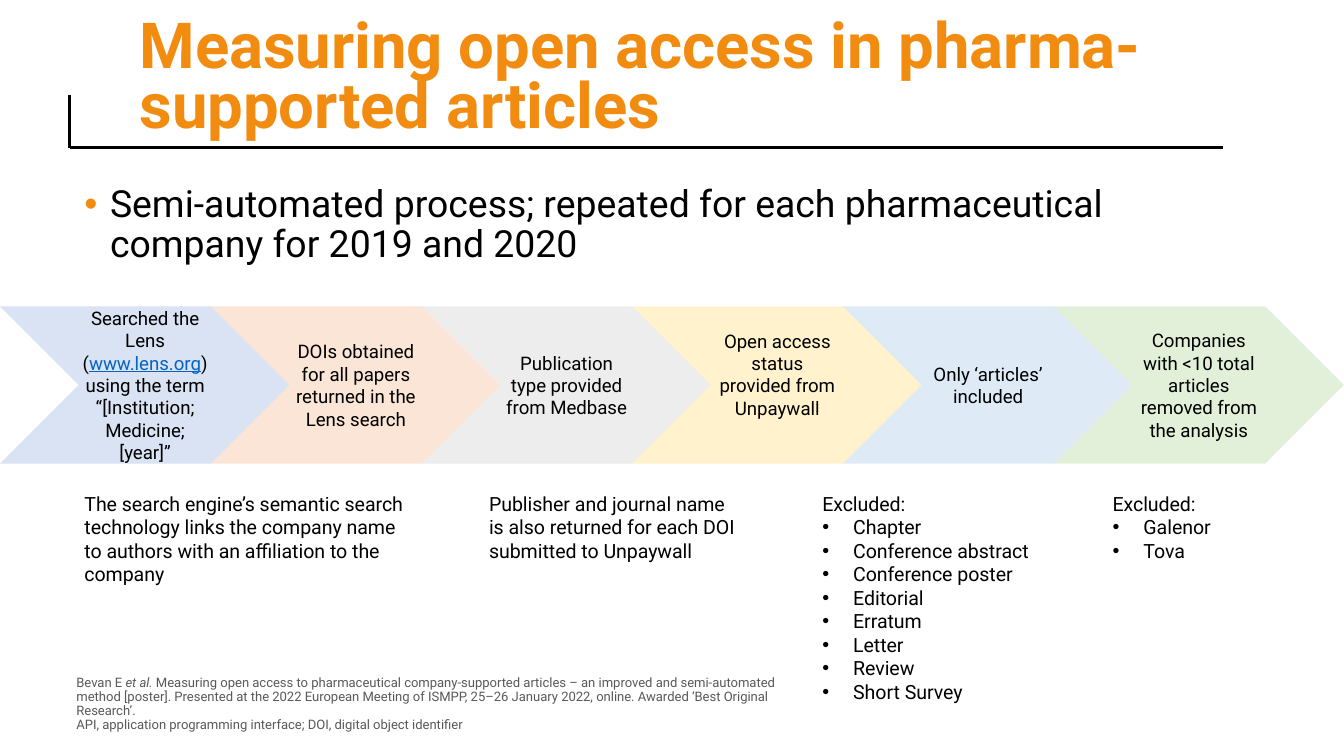
from lxml.etree import SubElement
from pptx import Presentation
from pptx.dml.color import RGBColor
from pptx.enum.shapes import MSO_CONNECTOR, MSO_SHAPE
from pptx.enum.text import MSO_ANCHOR as Anchor, PP_ALIGN as Align
from pptx.oxml.ns import qn
from pptx.util import Inches, Pt

FONT = "Roboto"
BLACK = RGBColor(0x00, 0x00, 0x00)
ORANGE = RGBColor(0xF2, 0x8C, 0x11)
GREY = RGBColor(0x59, 0x59, 0x59)
LINK_BLUE = RGBColor(0x05, 0x63, 0xC1)

SLIDE_WIDTH = 10
SLIDE_HEIGHT = SLIDE_WIDTH * 9 / 16
STEP_WIDTH = 2.16
NOTES_TOP = 3.61

STEPS = [
    (["Searched the Lens (", "www.lens.org", ") using the term “[Institution; Medicine; [year]”"],
     RGBColor(0xDA, 0xE3, 0xF3)),
    (["DOIs obtained for all papers returned in the Lens search"], RGBColor(0xFB, 0xE5, 0xD6)),
    (["Publication type provided from Medbase"], RGBColor(0xED, 0xED, 0xED)),
    (["Open access status provided from Unpaywall"], RGBColor(0xFF, 0xF2, 0xCC)),
    (["Only ‘articles’ included"], RGBColor(0xDE, 0xEB, 0xF7)),
    (["Companies with <10 total articles removed from the analysis"],
     RGBColor(0xE2, 0xF0, 0xD9)),
]
SEARCH_STEP, UNPAYWALL_STEP = 0, 3
STEP_PITCH = (SLIDE_WIDTH - STEP_WIDTH) / (len(STEPS) - 1)

# left, width, height, lead text, bulleted items
NOTES = [
    (0.53, 2.61, 0.81, "The search engine’s semantic search technology links the company name "
     "to authors with an affiliation to the company", []),
    (3.54, 2.09, 0.63, "Publisher and journal name is also returned for each DOI "
     "submitted to Unpaywall", []),
    (6.02, 1.77, 1.87, "Excluded:",
     ["Chapter", "Conference abstract", "Conference poster", "Editorial", "Erratum",
      "Letter", "Review", "Short Survey"]),
    (8.18, 1.77, 0.81, "Excluded:", ["Galenor", "Tova"]),
]

CITATION = [
    "Bevan E ",
    "et al. ",
    "Measuring open access to pharmaceutical company-supported articles – an improved and "
    "semi-automated method [poster]. Presented at the 2022 European Meeting of ISMPP, "
    "25–26 January 2022, online. Awarded ‘Best Original Research’.",
]
ABBREVIATIONS = "API, application programming interface; DOI, digital object identifier"


def style_text(frame, size, color=BLACK, bold=False, spacing=None):
    for paragraph in frame.paragraphs:
        if spacing:
            paragraph.line_spacing = spacing
        for run in paragraph.runs:
            run.font.name = FONT
            run.font.size = Pt(size)
            run.font.bold = bold
            run.font.color.rgb = color


def add_runs(paragraph, texts):
    for text in texts:
        paragraph.add_run().text = text


def add_bullet(paragraph, indent, color=BLACK):
    properties = paragraph._p.get_or_add_pPr()
    properties.set("marL", str(Inches(indent)))
    properties.set("indent", str(-Inches(indent)))
    bullet_color = SubElement(properties, qn("a:buClr"))
    SubElement(bullet_color, qn("a:srgbClr"), val=str(color))
    SubElement(properties, qn("a:buFont"), typeface="Arial")
    SubElement(properties, qn("a:buChar"), char="•")


def add_text_frame(slide, left, top, width, height, anchor=Anchor.TOP):
    box = slide.shapes.add_textbox(Inches(left), Inches(top), Inches(width), Inches(height))
    frame = box.text_frame
    frame.word_wrap = True
    frame.vertical_anchor = anchor
    return frame


def add_rule(slide, x1, y1, x2, y2):
    rule = slide.shapes.add_connector(
        MSO_CONNECTOR.STRAIGHT, Inches(x1), Inches(y1), Inches(x2), Inches(y2))
    rule.line.color.rgb = BLACK
    rule.line.width = Pt(1.5)
    SubElement(rule._element.spPr, qn("a:effectLst"))


def add_title(slide):
    add_rule(slide, 0.52, 0.71, 0.52, 1.1)
    add_rule(slide, 0.52, 1.1, 9.1, 1.1)
    title = add_text_frame(slide, 0.94, 0.07, 8.16, 1.03, Anchor.BOTTOM)
    title.text = "Measuring open access in pharma-supported articles"
    style_text(title, 34, ORANGE, bold=True, spacing=0.8)


def add_summary(slide):
    summary = add_text_frame(slide, 0.53, 1.33, 8.95, 4.02)
    summary.text = ("Semi-automated process; repeated for each pharmaceutical company "
                    "for 2019 and 2020")
    add_bullet(summary.paragraphs[0], 0.19, ORANGE)
    style_text(summary, 20, spacing=0.9)


def add_step(slide, index, texts, fill):
    step = slide.shapes.add_shape(
        MSO_SHAPE.CHEVRON, Inches(index * STEP_PITCH), Inches(2.28),
        Inches(STEP_WIDTH), Inches(1.17))
    step.shadow.inherit = False
    step.fill.solid()
    step.fill.fore_color.rgb = fill
    step.line.fill.background()
    frame = step.text_frame
    frame.word_wrap = True
    frame.vertical_anchor = Anchor.MIDDLE
    frame.margin_left = frame.margin_right = Inches(0.03)
    frame.margin_top = frame.margin_bottom = Inches(0.03 if index == SEARCH_STEP else 0.05)
    if index == UNPAYWALL_STEP:
        frame.margin_bottom = Inches(0.21)
    label = frame.paragraphs[0]
    label.alignment = Align.CENTER
    add_runs(label, texts)
    style_text(frame, 10)
    if index == SEARCH_STEP:
        address = label.runs[1].font
        address.color.rgb = LINK_BLUE
        address.underline = True


def add_note(slide, left, width, height, lead, items):
    note = add_text_frame(slide, left, NOTES_TOP, width, height)
    note.text = "\n".join([lead, *items])
    for item in note.paragraphs[1:]:
        add_bullet(item, 0.23)
    style_text(note, 10.5)


def add_footnote(slide):
    footnote = add_text_frame(slide, 0.47, 5.08, 5.68, 0.42, Anchor.BOTTOM)
    add_runs(footnote.paragraphs[0], CITATION)
    footnote.add_paragraph().text = ABBREVIATIONS
    style_text(footnote, 7, GREY, spacing=0.9)
    footnote.paragraphs[0].runs[1].font.italic = True


def main():
    deck = Presentation()
    deck.slide_width, deck.slide_height = Inches(SLIDE_WIDTH), Inches(SLIDE_HEIGHT)
    slide = deck.slides.add_slide(deck.slide_layouts[6])
    add_title(slide)
    add_summary(slide)
    for index, (texts, fill) in enumerate(STEPS):
        add_step(slide, index, texts, fill)
    for note in NOTES:
        add_note(slide, *note)
    add_footnote(slide)
    deck.save("out.pptx")


if __name__ == "__main__":
    main()
